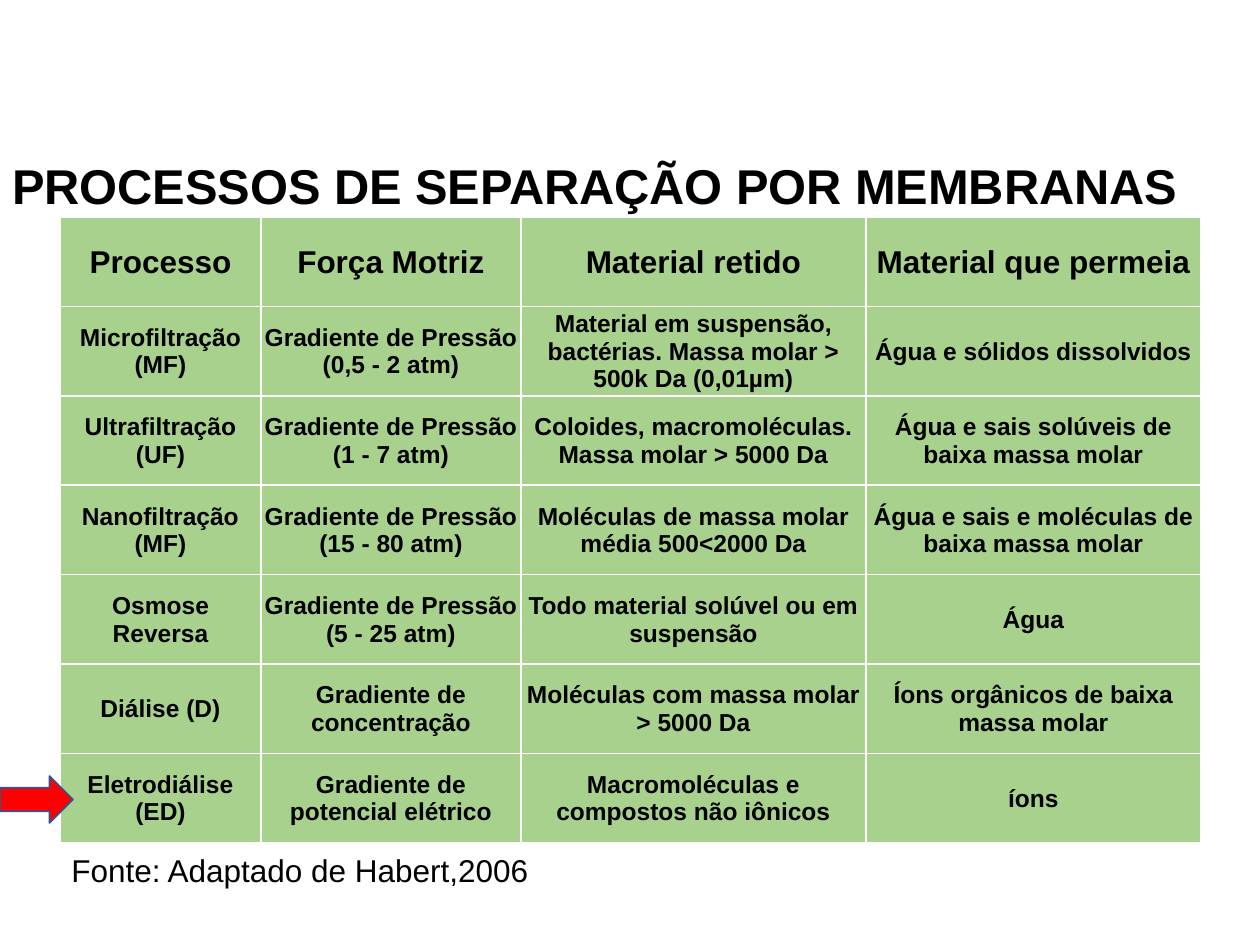
"""Builds the slide on membrane separation processes."""
from lxml.etree import SubElement
from pptx import Presentation
from pptx.dml.color import RGBColor
from pptx.enum.shapes import MSO_SHAPE
from pptx.enum.text import MSO_ANCHOR, PP_ALIGN
from pptx.oxml.ns import qn
from pptx.util import Pt

EMU_PER_PX = 914400 / 126
FONT = "Arial"
COLORS = {
    "text": "000000",
    "cell": "A9D18E",
    "border": "FFFFFF",
    "arrow": "FF0000",
    "outline": "325491",
}
COLUMN_WIDTHS = [201, 260, 345, 335]
TABLE_HEIGHT = 626
PROCESSES = [
    ["Processo", "Força Motriz", "Material retido", "Material que permeia"],
    ["Microfiltração (MF)", "Gradiente de Pressão (0,5 - 2 atm)",
     "Material em suspensão, bactérias. Massa molar > 500k Da (0,01µm)",
     "Água e sólidos dissolvidos"],
    ["Ultrafiltração (UF)", "Gradiente de Pressão (1 - 7 atm)",
     "Coloides, macromoléculas. Massa molar > 5000 Da",
     "Água e sais solúveis de baixa massa molar"],
    ["Nanofiltração (MF)", "Gradiente de Pressão (15 - 80 atm)",
     "Moléculas de massa molar média 500<2000 Da",
     "Água e sais e moléculas de baixa massa molar"],
    ["Osmose Reversa", "Gradiente de Pressão (5 - 25 atm)",
     "Todo material solúvel ou em suspensão", "Água"],
    ["Diálise (D)", "Gradiente de concentração",
     "Moléculas com massa molar > 5000 Da",
     "Íons orgânicos de baixa massa molar"],
    ["Eletrodiálise (ED)", "Gradiente de potencial elétrico",
     "Macromoléculas e compostos não iônicos", "íons"],
]


def px(length):
    return round(length * EMU_PER_PX)


def color(name):
    return RGBColor.from_string(COLORS[name])


def add_span(paragraph, text, size, bold=False):
    span = paragraph.add_run()
    span.text = text
    span.font.name = FONT
    span.font.size = Pt(size)
    span.font.bold = bold
    span.font.color.rgb = color("text")


def add_text(page, bounds, text, size, bold=False, anchor=MSO_ANCHOR.TOP):
    box = page.shapes.add_textbox(*map(px, bounds))
    frame = box.text_frame
    frame.word_wrap = True
    frame.vertical_anchor = anchor
    add_span(frame.paragraphs[0], text, size, bold)


def add_borders(cell):
    properties = cell._tc.get_or_add_tcPr()
    for side in ("lnL", "lnR", "lnT", "lnB"):
        line = SubElement(properties, qn(f"a:{side}"), w=str(Pt(1)))
        fill = SubElement(line, qn("a:solidFill"))
        SubElement(fill, qn("a:srgbClr"), val=COLORS["border"])


def fill_cell(cell, text, size):
    add_borders(cell)
    cell.fill.solid()
    cell.fill.fore_color.rgb = color("cell")
    cell.margin_left = cell.margin_right = cell.margin_top = px(1)
    cell.margin_bottom = 0
    cell.vertical_anchor = MSO_ANCHOR.MIDDLE
    paragraph = cell.text_frame.paragraphs[0]
    paragraph.alignment = PP_ALIGN.CENTER
    add_span(paragraph, text, size, bold=True)


def add_process_table(page, left, top):
    bounds = (left, top, sum(COLUMN_WIDTHS), TABLE_HEIGHT)
    table = page.shapes.add_table(
        len(PROCESSES), len(COLUMN_WIDTHS), *map(px, bounds)).table
    for column, width in zip(table.columns, COLUMN_WIDTHS):
        column.width = px(width)
    for row_index, (row, texts) in enumerate(zip(table.rows, PROCESSES)):
        row.height = px(TABLE_HEIGHT / len(PROCESSES))
        for cell, text in zip(row.cells, texts):
            fill_cell(cell, text, 14 if row_index else 18)


def add_arrow(page, bounds):
    arrow = page.shapes.add_shape(MSO_SHAPE.RIGHT_ARROW, *map(px, bounds))
    arrow.shadow.inherit = False
    arrow.fill.solid()
    arrow.fill.fore_color.rgb = color("arrow")
    arrow.line.color.rgb = color("outline")
    arrow.line.width = Pt(1)


def main():
    deck = Presentation()
    deck.slide_width, deck.slide_height = px(1260), px(945)
    page = deck.slides.add_slide(deck.slide_layouts[6])
    add_text(page, (0, 155, 1260, 60), "PROCESSOS DE SEPARAÇÃO POR MEMBRANAS",
             27.9, bold=True, anchor=MSO_ANCHOR.MIDDLE)
    add_process_table(page, 60, 217)
    add_arrow(page, (0, 776, 73, 47))
    add_text(page, (59, 845, 1134, 50), "Fonte: Adaptado de Habert,2006", 18)
    deck.save("out.pptx")


if __name__ == "__main__":
    main()
